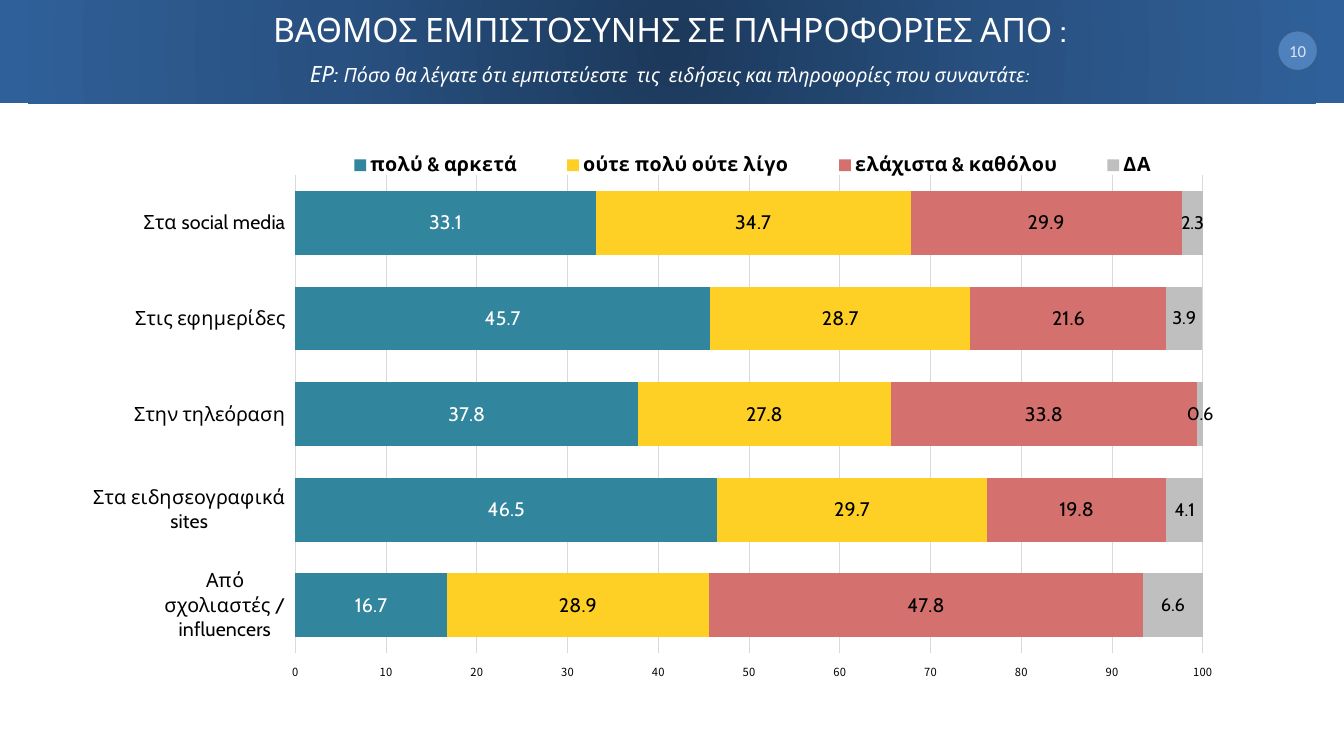
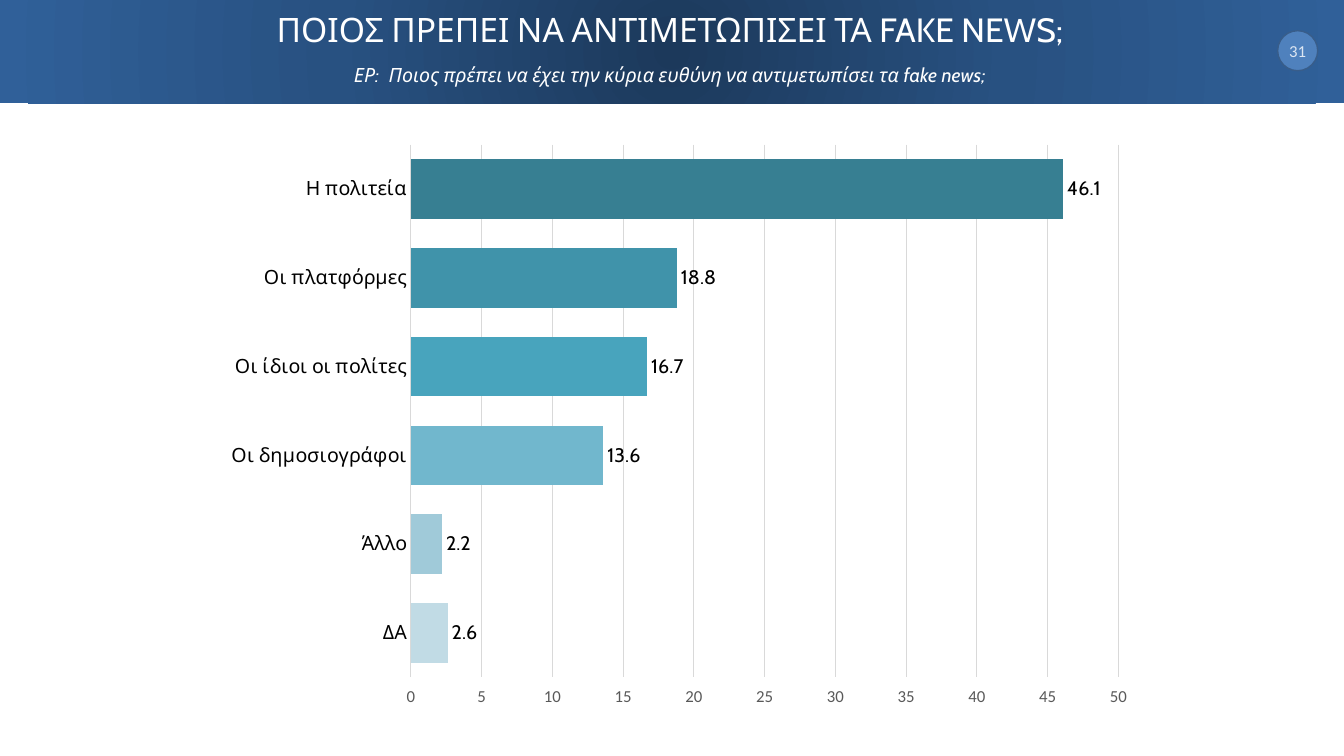
from pptx import Presentation
from pptx.chart.data import CategoryChartData
from pptx.dml.color import RGBColor
from pptx.enum.chart import XL_CHART_TYPE, XL_LABEL_POSITION
from pptx.enum.chart import XL_LEGEND_POSITION, XL_TICK_LABEL_POSITION, XL_TICK_MARK
from pptx.enum.shapes import MSO_SHAPE
from pptx.enum.text import MSO_ANCHOR, PP_ALIGN
from pptx.oxml import parse_xml
from pptx.oxml.ns import nsdecls, qn
from pptx.util import Pt


def color(value):
    return RGBColor.from_string(value)


def set_layout(element, index, bounds, inner=False):
    for old in element.findall(qn("c:layout")):
        element.remove(old)
    target = '<c:layoutTarget val="inner"/>' if inner else ""
    modes = "".join(f'<c:{side}Mode val="edge"/>' for side in "xy")
    sizes = "".join(f'<c:{side} val="{part}"/>' for side, part in zip("xywh", bounds))
    element.insert(index, parse_xml(
        f'<c:layout {nsdecls("c")}><c:manualLayout>{target}{modes}{sizes}'
        "</c:manualLayout></c:layout>"))


class SurveyDeck:
    FONT = "Cabin"
    PLAIN_FONT = "Calibri"
    WHITE, BLACK, GRID, AXIS_GRAY = "FFFFFF", "000000", "D9D9D9", "595959"
    BADGE, BADGE_LINE, BADGE_TEXT = "4F81BD", "385D8A", "DCE6F2"
    BAND_STOPS = ((0, "1C395B"), (50, "285181"), (100, "306099"))

    def __init__(self):
        self.deck = Presentation()
        self.deck.slide_width, self.deck.slide_height = Pt(960), Pt(540)
        self.page = None

    def add_page(self, number, title, question):
        self.page = self.deck.slides.add_slide(self.deck.slide_layouts[6])
        self.add_band()
        self.add_badge(number)
        self.add_heading(title, question)

    def style(self, font, size, shade, name=FONT, **flags):
        font.name, font.size = name, Pt(size)
        font.color.rgb = color(shade)
        for flag, value in flags.items():
            setattr(font, flag, value)

    def add_shape(self, kind, left, top, width, height):
        shape = self.page.shapes.add_shape(kind, Pt(left), Pt(top), Pt(width), Pt(height))
        shape.shadow.inherit = False
        return shape

    def add_band(self):
        band = self.add_shape(MSO_SHAPE.RECTANGLE, 0, 0, 960, 73.8)
        band.line.fill.background()
        band.fill.gradient()
        stops = "".join(
            f'<a:gs pos="{place * 1000}"><a:srgbClr val="{shade}"/></a:gs>'
            for place, shade in self.BAND_STOPS)
        gradient = band.fill._xPr.find(qn("a:gradFill"))
        gradient.getparent().replace(gradient, parse_xml(
            f'<a:gradFill {nsdecls("a")} rotWithShape="1"><a:gsLst>{stops}</a:gsLst>'
            '<a:path path="circle"><a:fillToRect l="50000" t="50000" r="50000" b="50000"/>'
            "</a:path></a:gradFill>"))

    def add_badge(self, number):
        badge = self.add_shape(MSO_SHAPE.OVAL, 912.6, 21.9, 28.6, 28.6)
        badge.fill.solid()
        badge.fill.fore_color.rgb = color(self.BADGE)
        badge.line.color.rgb = color(self.BADGE_LINE)
        badge.line.width = Pt(1)
        frame = badge.text_frame
        frame.word_wrap = False
        frame.vertical_anchor = MSO_ANCHOR.MIDDLE
        frame.margin_left = frame.margin_right = frame.margin_top = frame.margin_bottom = 0
        para = frame.paragraphs[0]
        para.alignment = PP_ALIGN.CENTER
        span = para.add_run()
        span.text = str(number)
        self.style(span.font, 12, self.BADGE_TEXT, self.PLAIN_FONT)

    def add_heading(self, title, question):
        box = self.page.shapes.add_textbox(Pt(47), Pt(4.3), Pt(863), Pt(63.4))
        frame = box.text_frame
        frame.word_wrap = True
        frame.vertical_anchor = MSO_ANCHOR.MIDDLE
        lines = (frame.paragraphs[0], frame.add_paragraph())
        for para, spans in zip(lines, ([(title, 24)], question)):
            para.alignment = PP_ALIGN.CENTER
            para.line_spacing = 0.9
            for text, size in spans:
                span = para.add_run()
                span.text = text
                self.style(span.font, size, self.WHITE, italic=para is lines[1])
        lines[1].space_before = Pt(9.5)

    def add_bars(self, kind, bounds, plot_bounds, categories, series, gap, top, step):
        data = CategoryChartData(number_format="General")
        data.categories = categories
        for name, values in series:
            data.add_series(name, values)
        frame = self.page.shapes.add_chart(kind, *[Pt(length) for length in bounds], data)
        chart = frame.chart
        chart.has_title = False
        chart.has_legend = False
        self.style(chart.font, 11, self.BLACK, self.PLAIN_FONT)
        plot = chart.plots[0]
        plot.gap_width = gap
        plot.vary_by_categories = False
        set_layout(chart._chartSpace.chart.plotArea, 0, plot_bounds, inner=True)
        names, scale = chart.category_axis, chart.value_axis
        for axis in (names, scale):
            axis.major_tick_mark = axis.minor_tick_mark = XL_TICK_MARK.NONE
        names.reverse_order = True
        scale.tick_label_position = XL_TICK_LABEL_POSITION.HIGH
        self.style(names.tick_labels.font, 14, self.BLACK)
        scale.minimum_scale, scale.maximum_scale, scale.major_unit = 0, top, step
        scale.has_major_gridlines = True
        scale.format.line.fill.background()
        for line in (names.format.line, scale.major_gridlines.format.line):
            line.color.rgb = color(self.GRID)
            line.width = Pt(0.75)
        return chart

    def add_legend(self, chart, bounds):
        chart.has_legend = True
        legend = chart.legend
        legend.position = XL_LEGEND_POSITION.BOTTOM
        legend.include_in_layout = False
        self.style(legend.font, 14, self.BLACK, bold=True)
        set_layout(legend._element, 1, bounds)

    def fill(self, part, shade):
        part.format.fill.solid()
        part.format.fill.fore_color.rgb = color(shade)

    def label(self, series, place, size, shade):
        labels = series.data_labels
        labels.show_value = True
        labels.position = place
        self.style(labels.font, size, shade)

    def add_stacked_bars(self, categories, series):
        chart = self.add_bars(
            XL_CHART_TYPE.BAR_STACKED, (47.3, 100.6, 831, 386), (0.197, 0.064, 0.78, 0.884),
            categories, [(name, values) for name, values, *_ in series], 50, 100, 10)
        chart.plots[0].overlap = 100
        chart.category_axis.tick_label_position = XL_TICK_LABEL_POSITION.LOW
        self.style(chart.value_axis.tick_labels.font, 8, self.BLACK, "Noto Sans CJK TC")
        self.add_legend(chart, (0.21, 0.01, 0.76, 0.07))
        for bars, (_, _, shade, text_shade, size) in zip(chart.plots[0].series, series):
            self.fill(bars, shade)
            self.label(bars, XL_LABEL_POSITION.CENTER, size, text_shade)

    def add_ranked_bars(self, rows):
        categories, values, shades = zip(*rows)
        chart = self.add_bars(
            XL_CHART_TYPE.BAR_CLUSTERED, (86.8, 79.7, 741, 437.8), (0.279, 0.054, 0.682, 0.869),
            categories, [("Series 1", values)], 49, 50, 5)
        self.style(chart.value_axis.tick_labels.font, 12, self.AXIS_GRAY, self.PLAIN_FONT)
        bars = chart.plots[0].series[0]
        for index, shade in enumerate(shades):
            self.fill(bars.points[index], shade)
        self.label(bars, XL_LABEL_POSITION.OUTSIDE_END, 14, self.BLACK)


def main():
    survey = SurveyDeck()

    survey.add_page(
        10, "ΒΑΘΜΟΣ ΕΜΠΙΣΤΟΣΥΝΗΣ ΣΕ ΠΛΗΡΟΦΟΡΙΕΣ ΑΠΟ :",
        [("ΕΡ: ", 16),
         ("Πόσο θα λέγατε ότι εμπιστεύεστε  τις  ειδήσεις και πληροφορίες που συναντάτε:", 14)])
    survey.add_stacked_bars(
        ["Στα social media", "Στις εφημερίδες", "Στην τηλεόραση",
         "Στα ειδησεογραφικά sites", "Από σχολιαστές /influencers"],
        [("πολύ & αρκετά", (33.1, 45.7, 37.8, 46.5, 16.7), "31859C", survey.WHITE, 14),
         ("ούτε πολύ ούτε λίγο", (34.7, 28.7, 27.8, 29.7, 28.9), "FED026", survey.BLACK, 14),
         ("ελάχιστα & καθόλου", (29.9, 21.6, 33.8, 19.8, 47.8), "D4706E", survey.BLACK, 14),
         ("ΔΑ", (2.3, 3.9, 0.6, 4.1, 6.6), "BFBFBF", survey.BLACK, 13)])

    survey.add_page(
        31, "ΠΟΙΟΣ ΠΡΕΠΕΙ ΝΑ ΑΝΤΙΜΕΤΩΠΙΣΕΙ ΤΑ FAKE NEWS;",
        [("ΕΡ:", 14), (" ", 16),
         (" Ποιος πρέπει να έχει την κύρια ευθύνη να αντιμετωπίσει τα fake news;", 14)])
    survey.add_ranked_bars([
        ("Η πολιτεία", 46.1, "377F92"),
        ("Οι πλατφόρμες", 18.8, "4093AA"),
        ("Οι ίδιοι οι πολίτες", 16.7, "48A4BD"),
        ("Οι δημοσιογράφοι", 13.6, "71B7CD"),
        ("Άλλο", 2.2, "A0CAD9"),
        ("ΔΑ", 2.6, "C1DBE5")])

    survey.deck.save("out.pptx")


if __name__ == "__main__":
    main()
